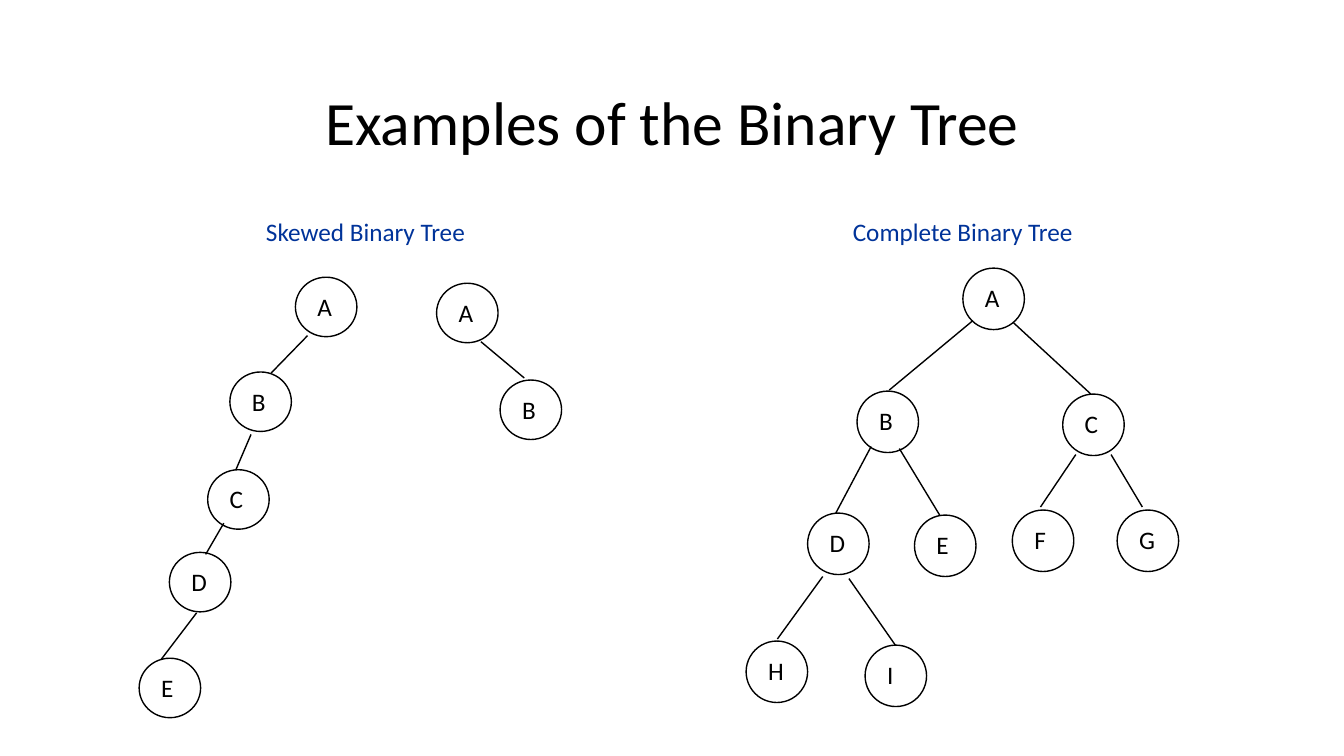
from dataclasses import dataclass

from lxml import etree
from pptx import Presentation
from pptx.dml.color import RGBColor
from pptx.enum.shapes import MSO_CONNECTOR, MSO_SHAPE
from pptx.enum.text import MSO_ANCHOR, PP_ALIGN
from pptx.oxml.ns import qn
from pptx.shapes.shapetree import GroupShapes, SlideShapes
from pptx.util import Emu, Pt

ELLIPSE = MSO_SHAPE.OVAL
STRAIGHT = MSO_CONNECTOR.STRAIGHT
LEFT, CENTER = PP_ALIGN.LEFT, PP_ALIGN.CENTER
TOP, MIDDLE = MSO_ANCHOR.TOP, MSO_ANCHOR.MIDDLE

EMU_PER_PX = 9144  # 100 px to the inch
BLANK_LAYOUT = 6
BLACK, BLUE, WHITE = "000000", "003399", "FFFFFF"
NODE_WIDTH = 61
LETTER_OFFSET_X, LETTER_OFFSET_Y = 12, 9
LABEL_HEIGHT = 50
LETTER_WIDTHS = {"B": 42, "C": 42, "E": 40, "F": 39, "I": 31}
DEFAULT_LETTER_WIDTH = 44


@dataclass(frozen=True)
class Node:
    letter: str
    left: int
    top: int


@dataclass(frozen=True)
class Edge:
    x1: int
    y1: int
    x2: int
    y2: int


@dataclass(frozen=True)
class Label:
    text: str
    left: int
    top: int
    width: int
    height: int = LABEL_HEIGHT
    size: int = 18
    color: str = BLACK
    align: PP_ALIGN = LEFT
    anchor: MSO_ANCHOR = TOP
    line_spacing: float = 1.0


@dataclass(frozen=True)
class Drawing:
    """One headed half of the slide, kept together as a group."""
    heading: Label
    node_height: int
    nodes: tuple[Node, ...]
    edges: tuple[Edge, ...]


TITLE = Label("Examples of the Binary Tree", 92, 40, 1150, 170, size=44,
              align=CENTER, anchor=MIDDLE, line_spacing=0.9)

SKEWED = Drawing(
    heading=Label("Skewed Binary Tree", 254, 210, 294, color=BLUE),
    node_height=59,
    nodes=(
        Node("A", 293, 275), Node("B", 228, 369), Node("C", 206, 466),
        Node("D", 168, 548), Node("E", 138, 653),
        Node("A", 433, 281), Node("B", 496, 377),
    ),
    edges=(
        Edge(305, 333, 269, 370), Edge(249, 431, 234, 466),
        Edge(222, 519, 204, 550), Edge(195, 608, 160, 654),
        Edge(477, 339, 520, 375),
    ),
)

COMPLETE = Drawing(
    heading=Label("Complete Binary Tree", 836, 210, 318, color=BLUE),
    node_height=61,
    nodes=(
        Node("A", 955, 266), Node("B", 850, 388), Node("C", 1054, 391),
        Node("D", 801, 509), Node("E", 907, 511), Node("F", 1004, 506),
        Node("G", 1108, 506), Node("H", 740, 636), Node("I", 858, 640),
    ),
    edges=(
        Edge(965, 318, 882, 387), Edge(1005, 320, 1082, 391),
        Edge(864, 443, 829, 509), Edge(892, 445, 932, 511),
        Edge(1067, 451, 1032, 503), Edge(1102, 451, 1133, 503),
        Edge(816, 572, 771, 634), Edge(842, 574, 888, 640),
    ),
)


def px(*lengths: int) -> list[Emu]:
    return [Emu(length * EMU_PER_PX) for length in lengths]


def rgb(color: str) -> RGBColor:
    return RGBColor.from_string(color)


def set_attributes(target: object, values: dict[str, object]) -> None:
    for name, value in values.items():
        setattr(target, name, value)


def add_label(shapes: SlideShapes | GroupShapes, label: Label) -> None:
    shape = shapes.add_textbox(*px(label.left, label.top, label.width, label.height))
    frame = shape.text_frame
    set_attributes(frame, {"word_wrap": True, "vertical_anchor": label.anchor})
    paragraph = frame.paragraphs[0]
    set_attributes(paragraph, {"alignment": label.align, "line_spacing": label.line_spacing})
    run = paragraph.add_run()
    run.text = label.text
    set_attributes(run.font, {"name": "Calibri", "size": Pt(label.size)})
    run.font.color.rgb = rgb(label.color)


def add_node(shapes: GroupShapes, node: Node, height: int) -> None:
    circle = shapes.add_shape(ELLIPSE, *px(node.left, node.top, NODE_WIDTH, height))
    circle.shadow.inherit = False
    circle.fill.background()
    circle.line.color.rgb = rgb(BLACK)
    circle.line.width = Pt(1)
    width = LETTER_WIDTHS.get(node.letter, DEFAULT_LETTER_WIDTH)
    add_label(shapes, Label(node.letter, node.left + LETTER_OFFSET_X,
                            node.top + LETTER_OFFSET_Y, width))


def add_edge(shapes: GroupShapes, edge: Edge) -> None:
    connector = shapes.add_connector(STRAIGHT, *px(edge.x1, edge.y1, edge.x2, edge.y2))
    connector.line.color.rgb = rgb(BLACK)
    connector.line.width = Pt(1)
    etree.SubElement(connector.element.spPr, qn("a:effectLst"))


def add_drawing(shapes: SlideShapes, drawing: Drawing) -> None:
    group = shapes.add_group_shape()
    add_label(group.shapes, drawing.heading)
    for node in drawing.nodes:
        add_node(group.shapes, node, drawing.node_height)
    for edge in drawing.edges:
        add_edge(group.shapes, edge)


def main() -> None:
    presentation = Presentation()
    presentation.slide_width, presentation.slide_height = px(1333, 750)
    slide = presentation.slides.add_slide(presentation.slide_layouts[BLANK_LAYOUT])
    slide.background.fill.solid()
    slide.background.fill.fore_color.rgb = rgb(WHITE)
    add_label(slide.shapes, TITLE)
    for drawing in (SKEWED, COMPLETE):
        add_drawing(slide.shapes, drawing)
    presentation.save("out.pptx")


if __name__ == "__main__":
    main()
